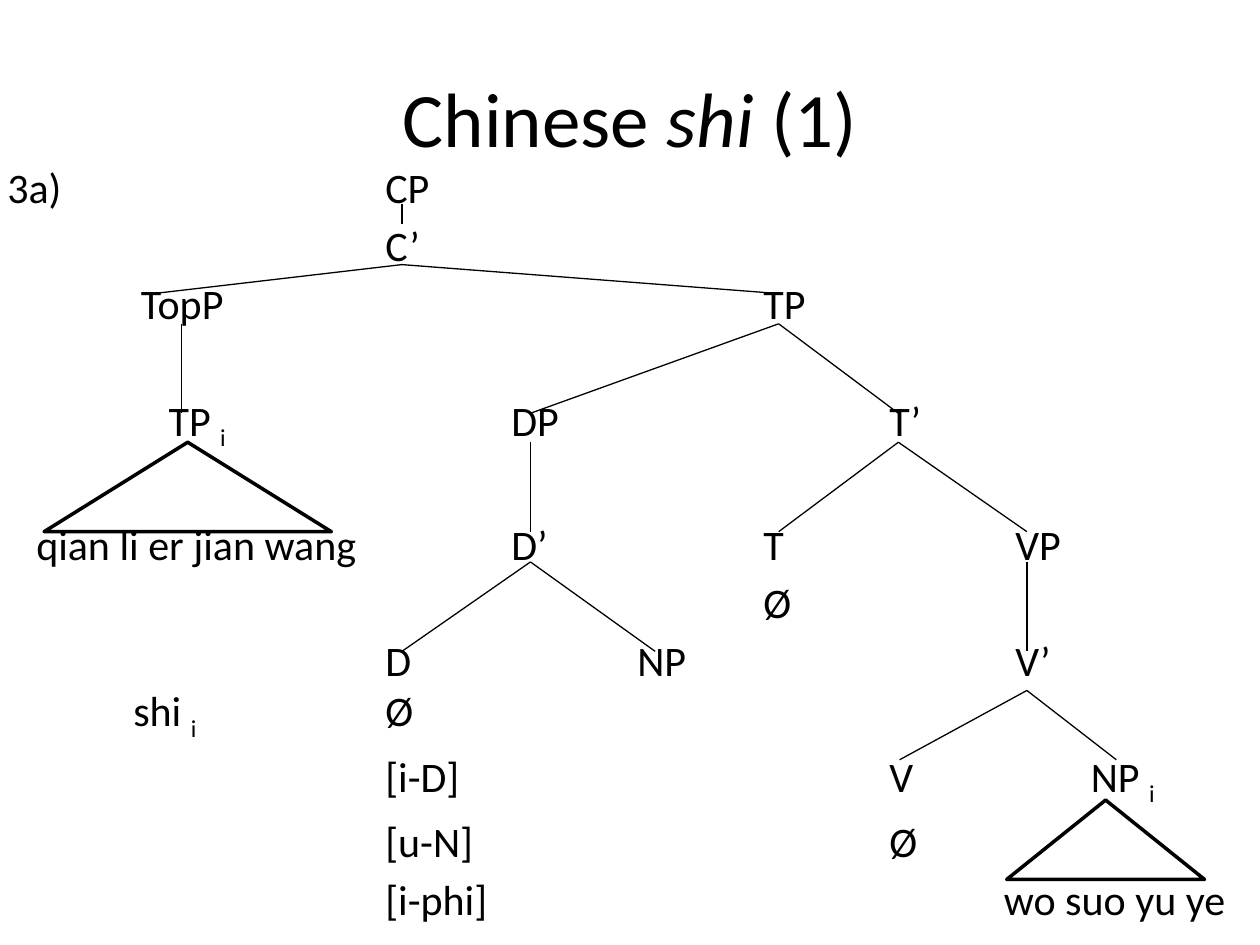
from lxml import etree
from pptx import Presentation
from pptx.dml.color import RGBColor
from pptx.enum import shapes, text
from pptx.oxml import ns
from pptx.util import Inches, Pt

BLACK = RGBColor(0, 0, 0)
WHITE = RGBColor(255, 255, 255)
FONT = "Calibri"

TITLE = [("Chinese ", False), ("shi ", True), ("(1)", False)]

GAP = 4.4           # points between rows
SKIP = 33.7 + GAP   # the same, with one row left empty

# Space before each row, then its labels as (tab stop, text, subscript)
ROWS = [
    (0, [(0, "3a)", ""), (3, "CP", "")]),
    (GAP, [(3, "C’", "")]),
    (GAP, [(1.06, "TopP", ""), (6, "TP", "")]),
    (SKIP, [(1.28, "TP ", "i"), (4, "DP", ""), (7, "T’", "")]),
    (SKIP, [(0.23, "qian li er jian wang", ""), (4, "D’", ""),
            (6, "T", ""), (8, "VP", "")]),
    (GAP, [(6, "Ø", "")]),
    (GAP, [(3, "D", ""), (5, "NP", ""), (8, "V’", "")]),
    (0, [(1, "shi ", "i"), (3, "Ø", "")]),
    (GAP, [(3, "[i-D]", ""), (7, "V", ""), (8.6, "NP ", "i")]),
    (GAP, [(3, "[u-N]", ""), (7, "Ø", "")]),
    (GAP, [(3, "[i-phi]", ""), (7.91, "wo suo yu ye", "")]),
]

# Parent x and y, child y, child x values
BRANCHES = [
    (3.19, 1.62, 1.78, [3.19]),
    (3.19, 2.1, 2.33, [1.22, 6.18]),
    (1.44, 2.57, 3.28, [1.44]),
    (6.18, 2.57, 3.28, [4.21, 7.13]),
    (4.21, 3.51, 4.22, [4.21]),
    (7.13, 3.51, 4.22, [6.18, 8.15]),
    (4.21, 4.46, 5.17, [3.19, 5.2]),
    (8.15, 4.46, 5.17, [8.15]),
    (8.15, 5.48, 6.03, [7.14, 8.86]),
]

ROOFS = [(0.35, 3.51, 2.28, 0.71), (7.99, 6.35, 1.57, 0.63)]


def add_run(para, words, size):
    run = para.add_run()
    run.text = words
    run.font.name = FONT
    run.font.size = Pt(size)
    run.font.color.rgb = BLACK
    return run


def add_frame(slide, *area):
    frame = slide.shapes.add_textbox(*map(Inches, area)).text_frame
    frame.word_wrap = True
    return frame


def add_title(slide):
    frame = add_frame(slide, 0.5, 0.3, 9, 1.25)
    frame.vertical_anchor = text.MSO_ANCHOR.MIDDLE
    para = frame.paragraphs[0]
    para.alignment = text.PP_ALIGN.CENTER
    for words, slant in TITLE:
        add_run(para, words, 44).font.italic = slant


def set_tabs(para, stops):
    tabs = etree.SubElement(para._p.get_or_add_pPr(), ns.qn("a:tabLst"))
    for stop in stops:
        etree.SubElement(tabs, ns.qn("a:tab"), pos=str(Inches(stop)), algn="l")


def add_labels(slide):
    frame = add_frame(slide, -0.04, 1.23, 10, 6.27)
    for i, (gap, labels) in enumerate(ROWS):
        para = frame.add_paragraph() if i else frame.paragraphs[0]
        para.space_before = Pt(gap)
        set_tabs(para, [stop for stop, _, _ in labels if stop])
        for stop, words, sub in labels:
            add_run(para, "\t" + words if stop else words, 24)
            if sub:
                run = add_run(para, sub, 24)
                run.font._element.set("baseline", "-25000")


def add_branch(slide, *ends):
    line = slide.shapes.add_connector(
        shapes.MSO_CONNECTOR.STRAIGHT, *map(Inches, ends))
    line.line.color.rgb = BLACK
    line.line.width = Pt(0.75)
    etree.SubElement(line._element.spPr, ns.qn("a:effectLst"))


def add_roof(slide, area):
    """Draw the triangle that stands for an unanalysed phrase."""
    roof = slide.shapes.add_shape(
        shapes.MSO_SHAPE.ISOSCELES_TRIANGLE, *map(Inches, area))
    roof.shadow.inherit = False
    roof.fill.solid()
    roof.fill.fore_color.rgb = WHITE
    roof.line.color.rgb = BLACK
    roof.line.width = Pt(2)


def main():
    deck = Presentation()
    deck.slide_width, deck.slide_height = Inches(10), Inches(7.5)
    slide = deck.slides.add_slide(deck.slide_layouts[6])
    add_title(slide)
    add_labels(slide)
    for x, y, low, kids in BRANCHES:
        for kid in kids:
            add_branch(slide, x, y, kid, low)
    for area in ROOFS:
        add_roof(slide, area)
    deck.save("out.pptx")


if __name__ == "__main__":
    main()
